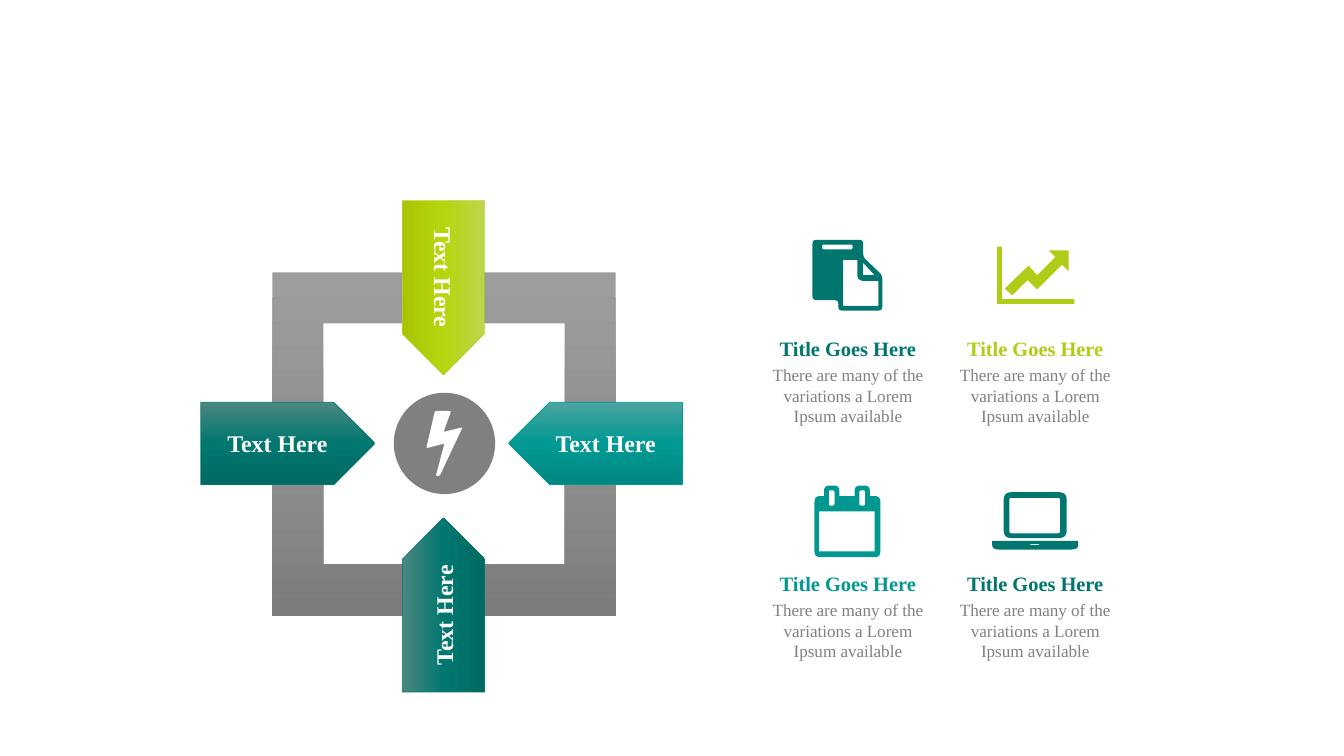
from copy import deepcopy
from math import dist

from pptx import Presentation
from pptx.dml.color import RGBColor
from pptx.enum.shapes import MSO_SHAPE
from pptx.enum.text import MSO_ANCHOR, MSO_AUTO_SIZE, PP_ALIGN
from pptx.oxml.ns import qn
from pptx.util import Inches, Pt

FONT = "Times New Roman"
WHITE = RGBColor(0xFF, 0xFF, 0xFF)
GRAY = RGBColor(0x80, 0x80, 0x80)
GREEN = RGBColor(0x01, 0x76, 0x6E)
TEAL = RGBColor(0x01, 0x98, 0x92)
LIME = RGBColor(0xB1, 0xCC, 0x17)
GRAY_FADE = [RGBColor(0x9D, 0x9D, 0x9D), RGBColor(0x90, 0x90, 0x90), RGBColor(0x7C, 0x7C, 0x7C)]
GREEN_FADE = [RGBColor(0x4B, 0x87, 0x80), RGBColor(0x00, 0x77, 0x6F), RGBColor(0x00, 0x6A, 0x63)]
TEAL_FADE = [RGBColor(0x4B, 0xA4, 0x9F), RGBColor(0x00, 0x99, 0x93), RGBColor(0x00, 0x88, 0x83)]
LIME_FADE = [RGBColor(0xBC, 0xD6, 0x4D), RGBColor(0xB7, 0xD5, 0x0E), RGBColor(0xA9, 0xC5, 0x04)]
TITLE = "Title Goes Here"
BODY = "There are many of the variations a Lorem Ipsum available"


def soften(points, radius):
    if not radius:
        return points
    curve = []
    for i, corner in enumerate(points):
        ends = []
        for near in (points[i - 1], points[(i + 1) % len(points)]):
            part = min(radius / dist(corner, near), 0.5)
            ends.append([c + (n - c) * part for c, n in zip(corner, near)])
        for t in (0, 0.25, 0.5, 0.75, 1):
            curve.append([(1 - t) ** 2 * a + 2 * t * (1 - t) * c + t * t * b
                          for a, c, b in zip(ends[0], corner, ends[1])])
    return curve


def box(left, top, right, bottom, radius=0):
    return soften([(left, top), (right, top), (right, bottom), (left, bottom)], radius)


class Board:
    def __init__(self, slide):
        self.shapes = slide.shapes
        self.font = FONT

    def label(self, para, text, size, color, bold=False):
        para.text = text
        para.alignment = PP_ALIGN.CENTER
        font = para.font
        font.name, font.size, font.bold = self.font, Pt(size), bold
        font.color.rgb = color

    def shape(self, kind, left, top, width, height):
        shape = self.shapes.add_shape(kind, *map(Inches, (left, top, width, height)))
        shape.shadow.inherit = False
        shape.line.fill.background()
        return shape

    def fade(self, shape, colors):
        shape.fill.gradient()
        shape.fill.gradient_angle = 270
        stops = next(shape._element.iter(qn("a:gsLst")))
        stops.append(deepcopy(stops[-1]))
        for i, (stop, color) in enumerate(zip(shape.fill.gradient_stops, colors)):
            stop.position = i / 2
            stop.color.rgb = color

    def frame(self, left, top, side, colors):
        frame = self.shape(MSO_SHAPE.FRAME, left, top, side, side)
        frame.adjustments[0] = 0.148
        self.fade(frame, colors)

    def arrow(self, left, top, colors, edge, turn=0, flip=False):
        arrow = self.shape(MSO_SHAPE.PENTAGON, left, top, 1.82, 0.86)
        arrow.rotation = turn
        if flip:
            arrow._element.spPr.xfrm.set("flipH", "1")
        self.fade(arrow, colors)
        arrow.line.color.rgb = edge
        arrow.line.width = Pt(0.5)
        arrow.text_frame.vertical_anchor = MSO_ANCHOR.MIDDLE
        self.label(arrow.text_frame.paragraphs[0], "Text Here", 18, WHITE, True)

    def disc(self, left, top, side, color):
        disc = self.shape(MSO_SHAPE.OVAL, left, top, side, side)
        disc.fill.solid()
        disc.fill.fore_color.rgb = color

    def icon(self, color, *outlines):
        pen = None
        for outline in outlines:
            points = [(Inches(x), Inches(y)) for x, y in outline]
            if pen is None:
                pen = self.shapes.build_freeform(*points[0])
            else:
                pen.move_to(*points[0])
            pen.add_line_segments(points[1:], close=True)
        icon = pen.convert_to_shape()
        icon.shadow.inherit = False
        icon.fill.solid()
        icon.fill.fore_color.rgb = color
        icon.line.fill.background()

    def note(self, left, top, color):
        note = self.shapes.add_textbox(*map(Inches, (left, top, 2, 1.05)))
        frame = note.text_frame
        frame.word_wrap = True
        frame.auto_size = MSO_AUTO_SIZE.SHAPE_TO_FIT_TEXT
        self.label(frame.paragraphs[0], TITLE, 15.4, color, True)
        body = frame.add_paragraph()
        body.space_before = Pt(2.6)
        self.label(body, BODY, 12.9, GRAY)


def draw_bolt(board):
    board.icon(WHITE, soften(
        [(4.55, 4.3), (4.72, 4.3), (4.64, 4.52), (4.84, 4.47),
         (4.6, 4.98), (4.56, 4.98), (4.65, 4.64), (4.46, 4.69)], 0.02))


def draw_files(board):
    board.icon(
        GREEN,
        soften([(8.5, 2.51), (9.03, 2.51), (9.03, 2.69), (9.23, 2.88), (9.23, 3.25),
                (8.77, 3.25), (8.77, 3.14), (8.5, 3.14)], 0.04),
        box(8.6, 2.56, 8.92, 2.61, 0.02),
        [(8.82, 2.72), (8.97, 2.72), (8.97, 2.89), (8.98, 2.92), (9.02, 2.94),
         (9.19, 2.94), (9.19, 3.2), (8.82, 3.2)],
        [(9.03, 2.75), (9.15, 2.88), (9.03, 2.88)])


def draw_chart(board):
    board.icon(
        LIME,
        [(10.43, 2.58), (10.48, 2.58), (10.48, 3.13), (11.24, 3.13), (11.24, 3.18), (10.43, 3.18)],
        soften([(10.97, 2.62), (11.18, 2.62), (11.18, 2.84), (11.11, 2.77), (10.85, 3.03),
                (10.75, 2.93), (10.59, 3.09), (10.51, 3.02), (10.76, 2.78), (10.85, 2.88),
                (11.04, 2.69)], 0.01))


def draw_dates(board):
    rings = [(8.62, 8.78), (8.94, 9.1)]
    outer = box(8.52, 5.19, 9.21, 5.83, 0.06)
    split = len(outer) // 4
    tabs = []
    for left, right in rings:
        tab = box(left, 5.08, right, 5.19, 0.06)
        tabs += [(left, 5.19)] + tab[:2 * split] + [(right, 5.19)]
    holes = [box(left + 0.05, 5.13, right - 0.05, 5.29, 0.02) for left, right in rings]
    board.icon(TEAL, outer[:split] + tabs + outer[split:], box(8.57, 5.35, 9.15, 5.77), *holes)


def draw_laptop(board):
    base = box(10.38, 5.66, 11.28, 5.75, 0.07)
    split = len(base) // 2
    board.icon(
        GREEN,
        [(10.38, 5.66), (11.28, 5.66)] + base[split:],
        box(10.5, 5.15, 11.16, 5.63, 0.08),
        box(10.56, 5.21, 11.09, 5.58, 0.02),
        box(10.78, 5.69, 10.87, 5.7))


def main():
    deck = Presentation()
    deck.slide_width, deck.slide_height = Inches(14.06), Inches(7.91)
    board = Board(deck.slides.add_slide(deck.slide_layouts[6]))

    board.frame(2.85, 2.85, 3.59, GRAY_FADE)
    board.arrow(2.1, 4.21, GREEN_FADE, GREEN)
    board.arrow(5.32, 4.21, TEAL_FADE, TEAL, flip=True)
    board.arrow(3.73, 2.58, LIME_FADE, LIME, turn=90)
    board.arrow(3.73, 5.9, GREEN_FADE, GREEN, turn=270)
    board.disc(4.12, 4.11, 1.06, GRAY)

    for draw in (draw_bolt, draw_files, draw_chart, draw_dates, draw_laptop):
        draw(board)

    for i, color in enumerate((GREEN, LIME, TEAL, GREEN)):
        row, col = divmod(i, 2)
        board.note(7.87 + 1.96 * col, 3.47 + 2.46 * row, color)

    deck.save("out.pptx")


if __name__ == "__main__":
    main()
